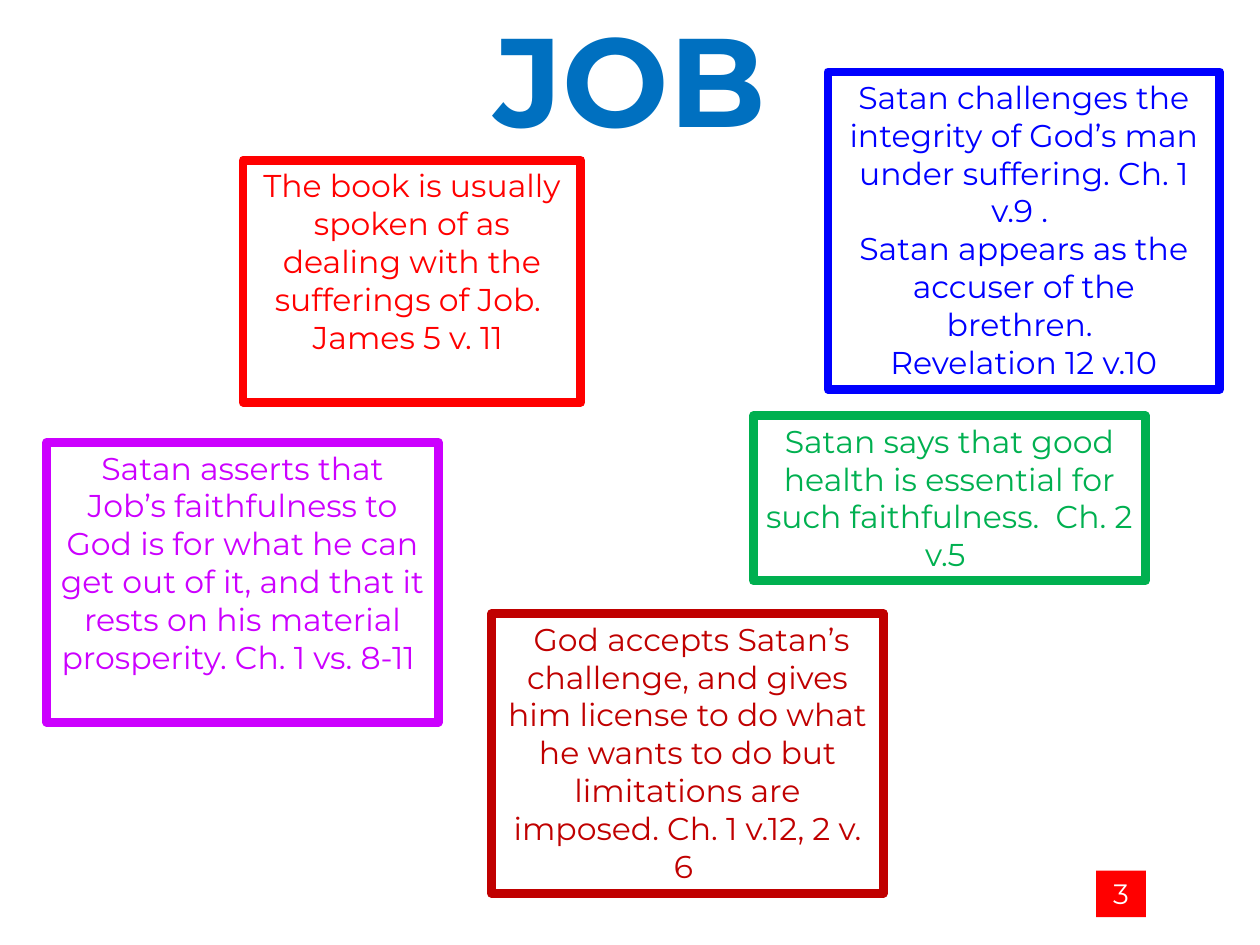
from pptx import Presentation
from pptx.dml.color import RGBColor
from pptx.enum.shapes import MSO_SHAPE
from pptx.enum.text import MSO_ANCHOR, MSO_AUTO_SIZE, PP_ALIGN
from pptx.util import Cm, Pt

RECT = MSO_SHAPE.RECTANGLE
TOP = MSO_ANCHOR.TOP
NO_FIT = MSO_AUTO_SIZE.NONE
CENTER = PP_ALIGN.CENTER

FONT = "Montserrat"
TITLE_ONLY = 5
COLORS = {
    "title": "0070C0",
    "red": "FF0000",
    "blue": "0000FF",
    "purple": "CC00FF",
    "green": "00B050",
    "crimson": "C00000",
    "white": "FFFFFF",
}

# Outlined notes: colour, (left, top, width, height) in cm, paragraphs
NOTES = [
    ("red", (4.9, 3.23, 6.81, 4.88), [
        "The book is usually spoken of as dealing with the sufferings of Job. ",
        "James 5 v. 11 "]),
    ("blue", (16.69, 1.45, 7.9, 6.4), [
        "Satan challenges the integrity of God’s man under suffering. Ch. 1 v.9 . ",
        "Satan appears as the accuser of the brethren. ",
        "Revelation 12 v.10"]),
    ("purple", (0.94, 8.92, 7.9, 5.64), [
        "Satan asserts that Job’s faithfulness to God is for what he can get "
        "out of it, and that it rests on his material prosperity. Ch. 1 vs. 8-11 "]),
    ("green", (15.19, 8.38, 7.9, 3.33), [
        "Satan says that good health is essential for such faithfulness.  "
        "Ch. 2 v.5 "]),
    ("crimson", (9.91, 12.37, 7.9, 5.64), [
        " God accepts Satan’s challenge, and gives him license to do what he "
        "wants to do but limitations are imposed. Ch. 1 v.12, 2 v. 6 "]),
]


def rgb(name):
    return RGBColor.from_string(COLORS[name])


def write(sp, paragraphs, *, size, color, bold=False):
    tf = sp.text_frame
    tf.word_wrap = True
    tf.auto_size = NO_FIT
    tf.vertical_anchor = TOP
    for i, text in enumerate(paragraphs):
        p = tf.paragraphs[0] if i == 0 else tf.add_paragraph()
        p.alignment = CENTER
        r = p.add_run()
        r.text = text
        r.font.name = FONT
        r.font.size = Pt(size)
        r.font.bold = bold
        r.font.color.rgb = rgb(color)


def add_title(s, text):
    sp = s.shapes.title
    sp.left, sp.top, sp.width, sp.height = Cm(0), Cm(-0.1), Cm(25.4), Cm(3.33)
    write(sp, [text], size=72, color="title", bold=True)


def add_box(s, box):
    sp = s.shapes.add_shape(RECT, *map(Cm, box))
    sp.shadow.inherit = False
    return sp


def add_page_number(s, text):
    sp = add_box(s, (22.1, 17.55, 1, 0.94))
    sp.fill.solid()
    sp.fill.fore_color.rgb = rgb("red")
    sp.line.fill.background()
    write(sp, [text], size=16, color="white")


def add_note(s, color, box, paragraphs):
    sp = add_box(s, box)
    sp.fill.background()
    sp.line.color.rgb = rgb(color)
    sp.line.width = Pt(5)
    write(sp, paragraphs, size=18, color=color)


def main():
    prs = Presentation()
    prs.slide_width, prs.slide_height = Cm(25.4), Cm(19.05)
    s = prs.slides.add_slide(prs.slide_layouts[TITLE_ONLY])

    # Heading and page number
    add_title(s, "JOB")
    add_page_number(s, "3")

    # Notes about the book
    for note in NOTES:
        add_note(s, *note)

    prs.save("out.pptx")


if __name__ == "__main__":
    main()
